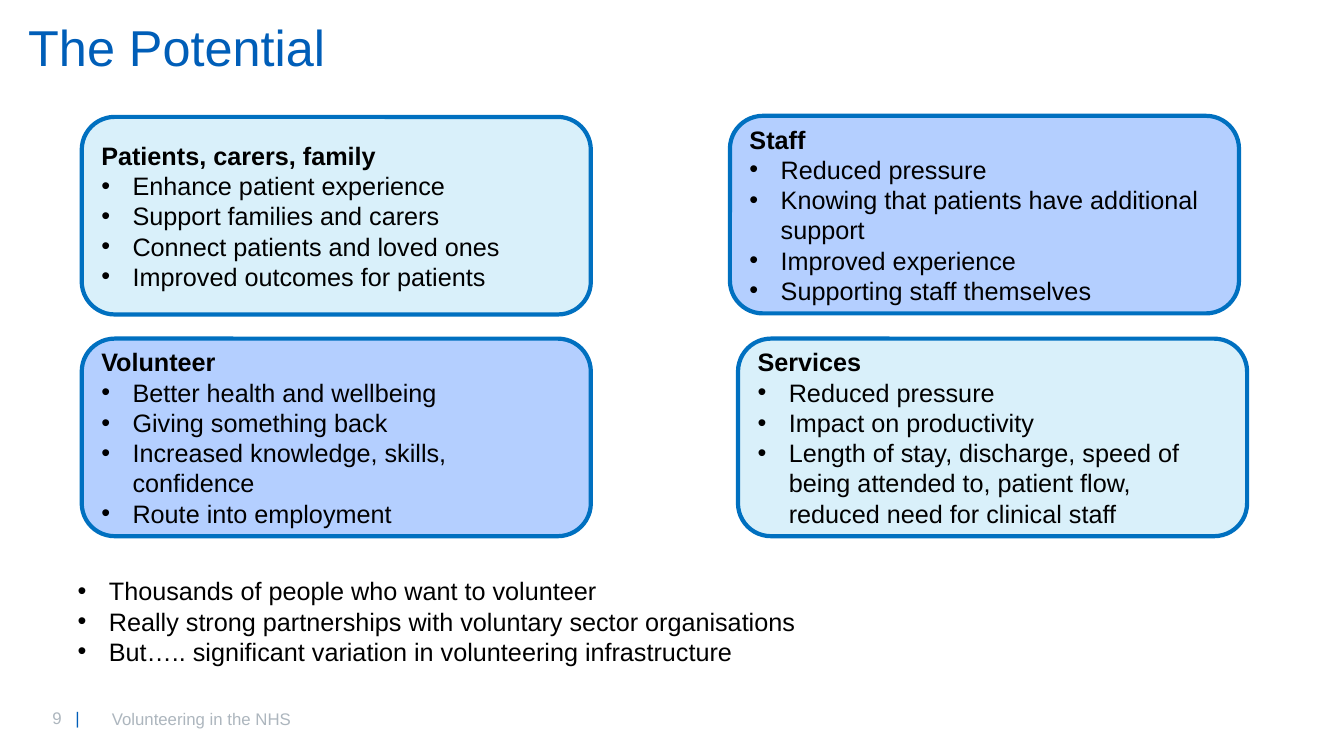
from lxml.etree import SubElement as Sub
from pptx import Presentation as Deck
from pptx.dml.color import RGBColor as Color
from pptx.enum.shapes import MSO_SHAPE as Shape
from pptx.enum.text import MSO_ANCHOR as Anchor, MSO_AUTO_SIZE as Auto, PP_ALIGN as Align
from pptx.oxml.ns import qn
from pptx.util import Inches, Pt

HUES = {
    "title": "005EB8", "text": "000000", "foot": "ADB6BE",
    "edge": "0070C0", "pale": "D9F0FA", "deep": "B4CFFF",
}
CARD = (37.88, 26.13)
CARDS = [
    ((6.08, 15.47), "pale", "Patients, carers, family", [
        "Enhance patient experience", "Support families and carers",
        "Connect patients and loved ones", "Improved outcomes for patients"]),
    ((54.31, 15.33), "deep", "Staff", [
        "Reduced pressure", "Knowing that patients have additional support",
        "Improved experience", "Supporting staff themselves"]),
    ((6.08, 44.8), "deep", "Volunteer", [
        "Better health and wellbeing", "Giving something back",
        "Increased knowledge, skills, confidence", "Route into employment"]),
    ((54.91, 44.8), "pale", "Services", [
        "Reduced pressure", "Impact on productivity",
        "Length of stay, discharge, speed of being attended to, "
        "patient flow, reduced need for clinical staff"]),
]
POINTS = [
    "Thousands of people who want to volunteer",
    "Really strong partnerships with voluntary sector organisations",
    "But….. significant variation in volunteering infrastructure",
]


class Page:
    """Draws styled parts on one slide, placed by percent of its size."""

    def __init__(self, deck):
        self.deck = deck
        self.font = "Arial"
        self.slide = deck.slides.add_slide(deck.slide_layouts[1])

    def spot(self, left, top, width, height):
        wide, high = self.deck.slide_width / 100, self.deck.slide_height / 100
        return [int(n) for n in (left * wide, top * high, width * wide, height * high)]

    def place(self, item, spot):
        item.left, item.top, item.width, item.height = self.spot(*spot)

    def style(self, run, size, hue, bold=False):
        font = run.font
        font.name, font.size, font.bold = self.font, Pt(size), bold
        font.color.rgb = Color.from_string(HUES[hue])

    def fill_text(self, frame, lines, heads=0):
        frame.word_wrap = True
        frame.auto_size = Auto.NONE
        frame.text = "\n".join(lines)
        for row, para in enumerate(frame.paragraphs):
            para.alignment = Align.LEFT
            para.space_before = Pt(0)
            if row >= heads:
                self.bullet(para)
            self.style(para.runs[0], 18, "text", row < heads)

    def bullet(self, para):
        props = para._p.get_or_add_pPr()
        props.set("marL", str(Inches(0.31)))
        props.set("indent", str(-Inches(0.31)))
        Sub(props, qn("a:buFont")).set("typeface", self.font)
        Sub(props, qn("a:buChar")).set("char", "•")

    def title(self, text, spot):
        item = self.slide.shapes.title
        self.place(item, spot)
        frame = item.text_frame
        frame.text = text
        frame.auto_size = Auto.NONE
        frame.vertical_anchor = Anchor.BOTTOM
        para = frame.paragraphs[0]
        para.alignment = Align.LEFT
        para.line_spacing = 0.9
        self.style(para.runs[0], 36, "title")

    def list(self, lines, spot):
        item = self.slide.placeholders[1]
        self.place(item, spot)
        self.fill_text(item.text_frame, lines)

    def card(self, spot, hue, head, lines):
        item = self.slide.shapes.add_shape(Shape.ROUNDED_RECTANGLE, *self.spot(*spot))
        item.shadow.inherit = False
        item.fill.solid()
        item.fill.fore_color.rgb = Color.from_string(HUES[hue])
        item.line.color.rgb = Color.from_string(HUES["edge"])
        item.line.width = Pt(3)
        item.text_frame.vertical_anchor = Anchor.MIDDLE
        self.fill_text(item.text_frame, [head, *lines], heads=1)

    def note(self, parts, spot, anchor=Anchor.TOP):
        frame = self.slide.shapes.add_textbox(*self.spot(*spot)).text_frame
        frame.word_wrap = True
        frame.vertical_anchor = anchor
        para = frame.paragraphs[0]
        tabs = Sub(para._p.get_or_add_pPr(), qn("a:tabLst"))
        Sub(tabs, qn("a:tab"), pos=str(Inches(0.23)), algn="l")
        for text, hue in parts:
            run = para.add_run()
            run.text = text
            self.style(run, 12, hue)


def main():
    deck = Deck()
    deck.slide_width, deck.slide_height = Inches(13.33), Inches(7.5)
    page = Page(deck)
    page.title("The Potential", (1.35, 2, 53.86, 8.93))
    for spot, hue, head, lines in CARDS:
        page.card(spot + CARD, hue, head, lines)
    page.list(POINTS, (5.03, 75.47, 68.87, 13.47))
    page.note([("9\t", "foot"), ("|", "title")], (3.15, 92.93, 7.05, 4))
    page.note([("Volunteering in the NHS", "foot")], (7.58, 92.4, 62.64, 5.33), Anchor.MIDDLE)
    deck.save("out.pptx")


if __name__ == "__main__":
    main()
